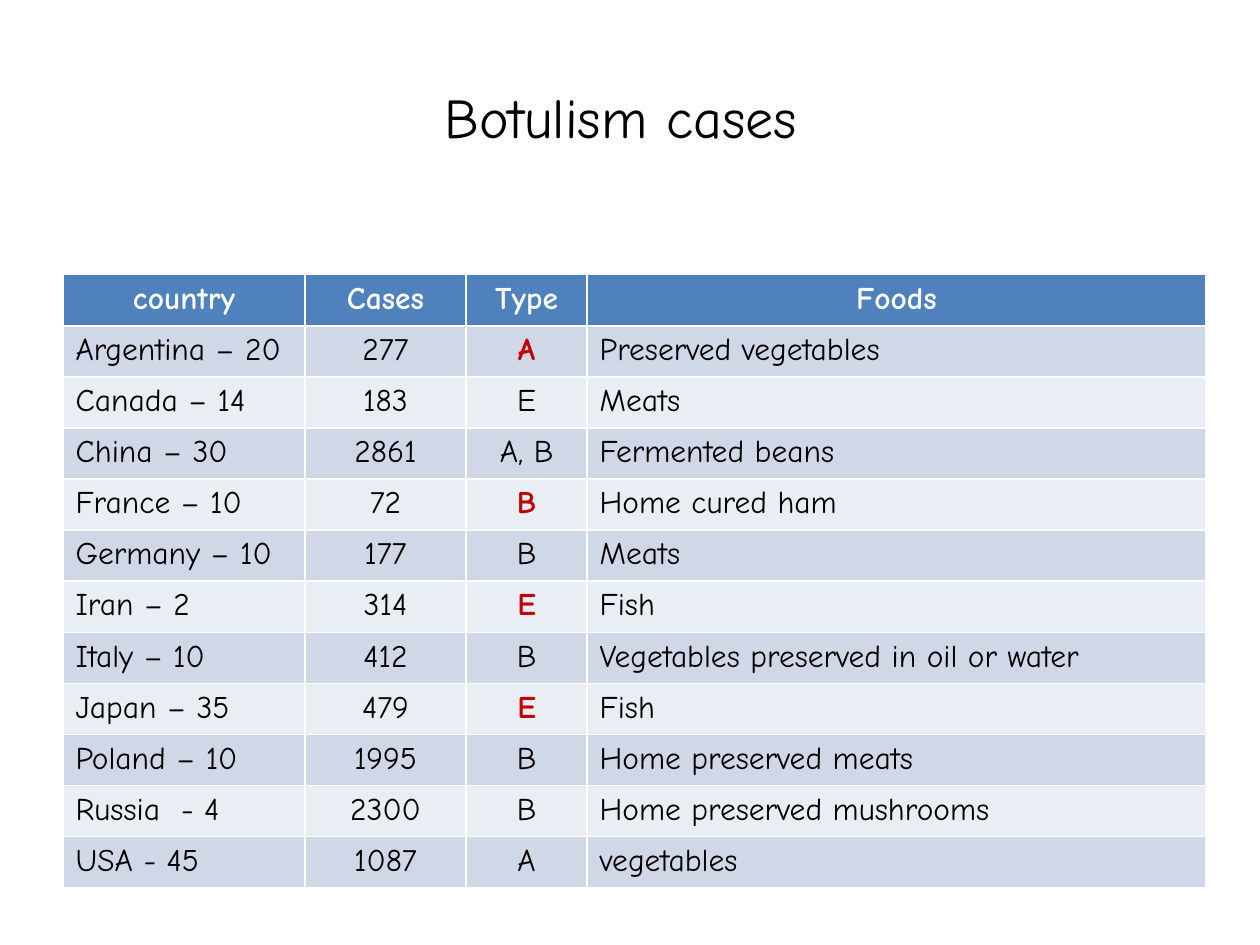
"""Build a slide with a table of botulism cases by country."""
from pptx import Presentation
from pptx.dml.color import RGBColor
from pptx.enum.text import MSO_ANCHOR, PP_ALIGN
from pptx.util import Inches, Pt

LEFT, CENTER = PP_ALIGN.LEFT, PP_ALIGN.CENTER
MIDDLE = MSO_ANCHOR.MIDDLE
BLACK = RGBColor(0x00, 0x00, 0x00)
WHITE = RGBColor(0xFF, 0xFF, 0xFF)
RED = RGBColor(0xC0, 0x00, 0x00)
HEADER_BLUE = RGBColor(0x4F, 0x81, 0xBD)
BANDS = (RGBColor(0xE9, 0xED, 0xF4), RGBColor(0xD0, 0xD8, 0xE8))
FONT = "Comic Neue"

HEADINGS = ("country", "Cases", "Type", "Foods")
CASES = (
    ("Argentina – 20", "277", "A", "Preserved vegetables"),
    ("Canada – 14", "183", "E", "Meats"),
    ("China – 30", "2861", "A, B", "Fermented beans"),
    ("France – 10", "72", "B", "Home cured ham"),
    ("Germany – 10", "177", "B", "Meats"),
    ("Iran – 2", "314", "E", "Fish"),
    ("Italy – 10", "412", "B", "Vegetables preserved in oil or water"),
    ("Japan – 35", "479", "E", "Fish"),
    ("Poland – 10", "1995", "B", "Home preserved meats"),
    ("Russia  - 4", "2300", "B", "Home preserved mushrooms"),
    ("USA - 45", "1087", "A", "vegetables"),
)
RED_TYPE_COUNTRIES = ("Argentina", "France", "Iran", "Japan")
COLUMN_WIDTHS = (1.92, 1.28, 0.96, 4.91)
COLUMN_ALIGNMENTS = (LEFT, CENTER, CENTER, LEFT)
TYPE_COLUMN = HEADINGS.index("Type")
MARGIN = 0.5
TABLE_TOP, TABLE_HEIGHT = 2.18, 4.87


def style_text(frame, text, size, color, bold, alignment):
    frame.text = text
    paragraph = frame.paragraphs[0]
    paragraph.alignment = alignment
    font = paragraph.runs[0].font
    font.name = FONT
    font.size = Pt(size)
    font.bold = bold
    font.color.rgb = color


prs = Presentation()
prs.slide_width, prs.slide_height = Inches(10), Inches(7.5)
slide = prs.slides.add_slide(prs.slide_layouts[5])

title = slide.shapes.title
title.left, title.top = Inches(MARGIN), Inches(0.3)
title.width, title.height = prs.slide_width - 2 * Inches(MARGIN), Inches(1.25)
title.text_frame.vertical_anchor = MIDDLE
style_text(title.text_frame, "Botulism cases ", 32, BLACK, False, CENTER)

rows = (HEADINGS, *CASES)
case_table = slide.shapes.add_table(
    len(rows), len(HEADINGS), Inches(MARGIN), Inches(TABLE_TOP),
    Inches(sum(COLUMN_WIDTHS)), Inches(TABLE_HEIGHT)).table
for column, width in zip(case_table.columns, COLUMN_WIDTHS):
    column.width = Inches(width)

for r, values in enumerate(rows):
    is_header = r == 0
    for c, value in enumerate(values):
        cell = case_table.cell(r, c)
        cell.fill.solid()
        cell.fill.fore_color.rgb = HEADER_BLUE if is_header else BANDS[r % 2]
        is_red = c == TYPE_COLUMN and values[0].startswith(RED_TYPE_COUNTRIES)
        color = WHITE if is_header else RED if is_red else BLACK
        alignment = CENTER if is_header else COLUMN_ALIGNMENTS[c]
        style_text(cell.text_frame, value, 18, color, is_header or is_red, alignment)

prs.save("out.pptx")
